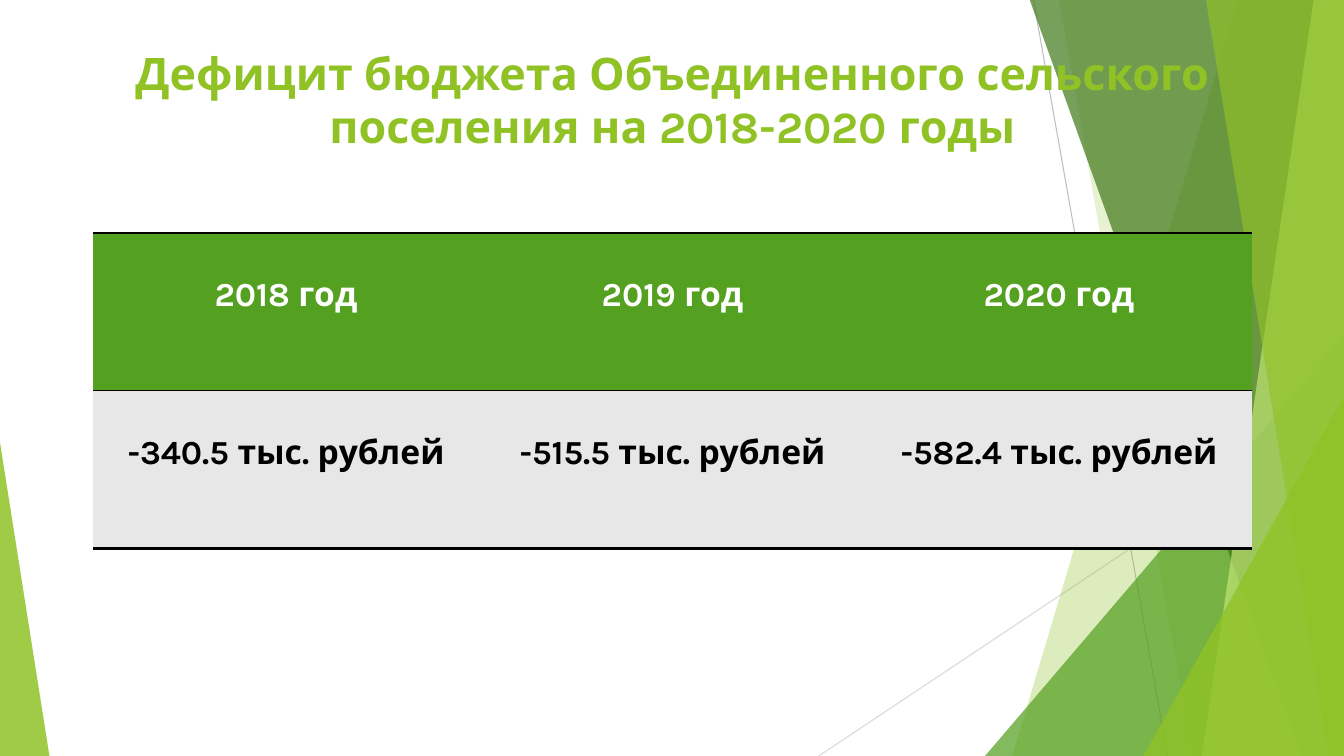
from dataclasses import dataclass

from lxml.etree import SubElement
from pptx import Presentation
from pptx.dml.color import RGBColor
from pptx.enum.shapes import MSO_CONNECTOR, MSO_SHAPE
from pptx.enum.text import MSO_ANCHOR, MSO_AUTO_SIZE, PP_ALIGN
from pptx.oxml.ns import qn
from pptx.util import Inches, Pt

WIDTH, HEIGHT = 13.33, 7.5
FONT = "Karla"
COLORS = {
    "lime": "90C226",
    "pale_lime": "C0E474",
    "green": "54A021",
    "dark_green": "3F7819",
    "band": "E7E7E7",
    "white": "FFFFFF",
    "black": "000000",
    "gray": "BFBFBF",
    "light_gray": "D9D9D9",
}
TITLE = "Дефицит бюджета Объединенного сельского поселения на 2018-2020 годы"
DEFICITS = {
    "2018 год": "-340.5 тыс. рублей",
    "2019 год": "-515.5 тыс. рублей",
    "2020 год": "-582.4 тыс. рублей",
}


@dataclass
class Ray:
    start: tuple[float, float]
    end: tuple[float, float]
    color: str


@dataclass
class Shard:
    """Band along the right edge, from x = top at the top to x = bottom."""
    top: float
    bottom: float
    color: str
    opacity: int


@dataclass
class Corner:
    """Right triangle standing on the bottom edge, its peak at 0 or 1."""
    left: float
    top: float
    width: float
    peak: int
    color: str
    opacity: int


@dataclass
class TableRow:
    texts: list[str]
    fill: str
    color: str
    borders: dict[str, float]


DECOR = [
    Ray((10.25, 0), (11.58, 7.5), "gray"),
    Ray((13.33, 4.03), (8.12, 7.5), "light_gray"),
    Shard(12.28, 10.04, "lime", 30),
    Shard(10.5, 11.83, "lime", 20),
    Corner(9.77, 3.33, 3.56, 1, "green", 72),
    Shard(10.21, 12.91, "dark_green", 70),
    Shard(13.03, 11.92, "pale_lime", 70),
    Shard(11.96, 13.18, "lime", 65),
    Corner(11.34, 3.93, 1.99, 1, "lime", 80),
    Corner(0, 4.39, 0.49, 0, "lime", 85),
]
ROWS = [
    TableRow(list(DEFICITS), "green", "white", {"lnT": 2, "lnB": 1.5}),
    TableRow(list(DEFICITS.values()), "band", "black", {"lnT": 1.5, "lnB": 2}),
]


def rgb(name: str) -> RGBColor:
    return RGBColor.from_string(COLORS[name])


def paint(sp, color: str, opacity: int) -> None:
    sp.shadow.inherit = False
    sp.line.fill.background()
    sp.fill.solid()
    sp.fill.fore_color.rgb = rgb(color)
    clr = sp._element.spPr.find(qn("a:solidFill"))[0]
    SubElement(clr, qn("a:alpha"), val=str(opacity * 1000))


def draw_ray(shapes, ray: Ray) -> None:
    points = [Inches(v) for v in (*ray.start, *ray.end)]
    line = shapes.add_connector(MSO_CONNECTOR.STRAIGHT, *points)
    line.line.color.rgb = rgb(ray.color)
    line.line.width = Pt(0.75)
    SubElement(line._element.spPr, qn("a:effectLst"))


def draw_shard(shapes, shard: Shard) -> None:
    builder = shapes.build_freeform(Inches(shard.top), Inches(-0.01))
    corners = [(WIDTH, -0.01), (WIDTH, HEIGHT), (shard.bottom, HEIGHT)]
    builder.add_line_segments([(Inches(x), Inches(y)) for x, y in corners])
    paint(builder.convert_to_shape(), shard.color, shard.opacity)


def draw_corner(shapes, corner: Corner) -> None:
    box = (corner.left, corner.top, corner.width, HEIGHT - corner.top)
    sp = shapes.add_shape(MSO_SHAPE.ISOSCELES_TRIANGLE, *map(Inches, box))
    sp.adjustments[0] = corner.peak
    paint(sp, corner.color, corner.opacity)


def write(tf, text: str, size: int, color: str) -> None:
    p = tf.paragraphs[0]
    p.alignment = PP_ALIGN.CENTER
    r = p.add_run()
    r.text = text
    for name, value in {"name": FONT, "size": Pt(size), "bold": True}.items():
        setattr(r.font, name, value)
    r.font.color.rgb = rgb(color)


def set_borders(cell, borders: dict[str, float]) -> None:
    """Draw the given edges in black and leave the others empty."""
    tcPr = cell._tc.get_or_add_tcPr()
    for i, edge in enumerate(("lnL", "lnR", "lnT", "lnB")):
        ln = tcPr.makeelement(qn(f"a:{edge}"))
        tcPr.insert(i, ln)
        if edge in borders:
            ln.set("w", str(Pt(borders[edge])))
            fill = SubElement(ln, qn("a:solidFill"))
            SubElement(fill, qn("a:srgbClr"), val=COLORS["black"])
        else:
            SubElement(ln, qn("a:noFill"))


def add_title(slide) -> None:
    sp = slide.shapes.title
    box = {"left": 0.92, "top": 0.4, "width": 11.5, "height": 0.66}
    for name, value in box.items():
        setattr(sp, name, Inches(value))
    tf = sp.text_frame
    frame = {"word_wrap": True, "auto_size": MSO_AUTO_SIZE.NONE,
             "vertical_anchor": MSO_ANCHOR.TOP}
    for name, value in frame.items():
        setattr(tf, name, value)
    write(tf, TITLE, 32, "lime")
    slide.shapes._spTree.append(sp._element)  # in front of the decor


def add_deficit_table(shapes) -> None:
    box = map(Inches, (0.92, 2.31, 11.5, 3.13))
    table = shapes.add_table(len(ROWS), len(DEFICITS), *box).table
    for i, row in enumerate(ROWS):
        for j, text in enumerate(row.texts):
            cell = table.cell(i, j)
            cell.margin_top = Inches(0.43)
            cell.fill.solid()
            cell.fill.fore_color.rgb = rgb(row.fill)
            write(cell.text_frame, text, 24, row.color)
            set_borders(cell, row.borders)


def main() -> None:
    prs = Presentation()
    prs.slide_width, prs.slide_height = Inches(WIDTH), Inches(HEIGHT)
    slide = prs.slides.add_slide(prs.slide_layouts[5])
    draw = {Ray: draw_ray, Shard: draw_shard, Corner: draw_corner}
    for item in DECOR:
        draw[type(item)](slide.shapes, item)
    add_title(slide)
    add_deficit_table(slide.shapes)
    prs.save("out.pptx")


if __name__ == "__main__":
    main()
